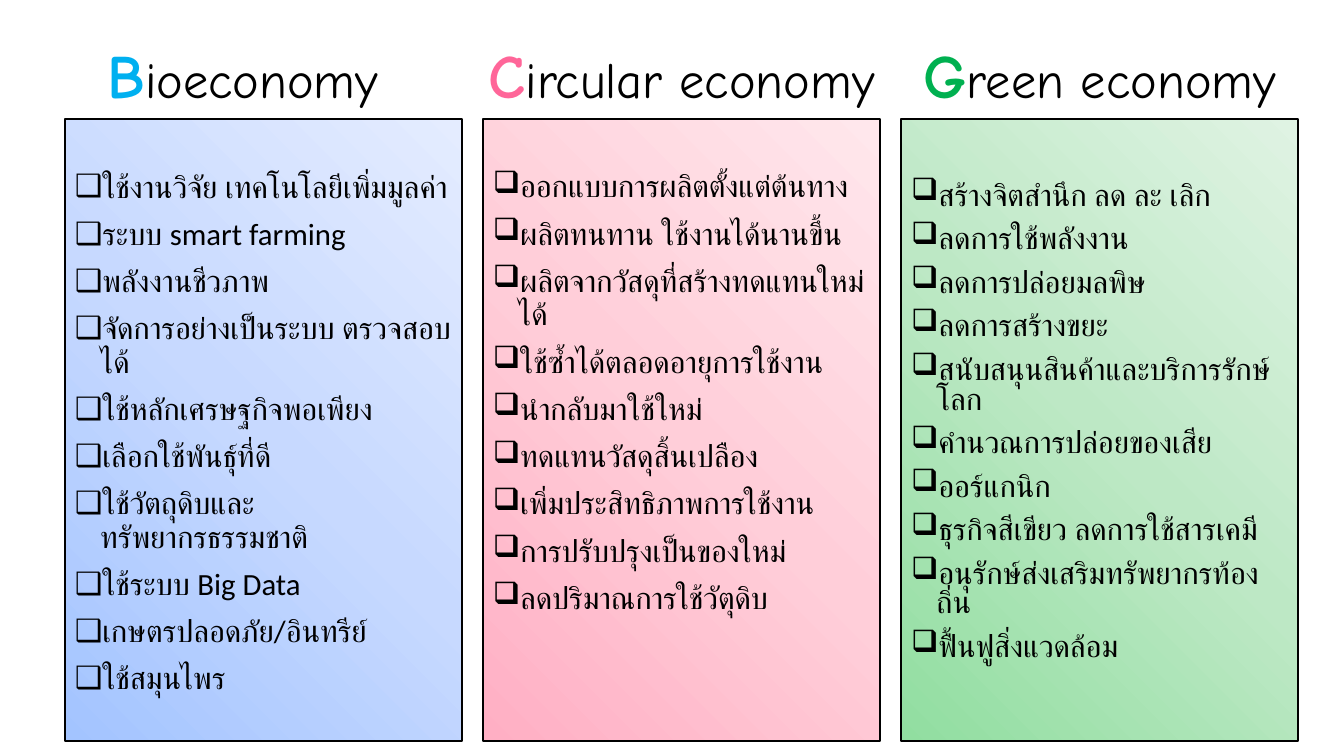
import copy
import pptx
import pptx.util
import pptx.dml.color
import pptx.enum.text
import pptx.enum.shapes
import pptx.oxml.ns
import lxml.etree

Cm, Pt = pptx.util.Cm, pptx.util.Pt
Enum = pptx.enum.text

HUES = {
    "ink": "000000",
    "bio": "00B0F0", "circle": "FF6699", "green": "00B050",
    "bio fade": ("A3C4FF", "C7D9FF", "E4ECFF"),
    "circle fade": ("FFAFC4", "FFCED9", "FFE7EC"),
    "green fade": ("91DEA0", "BDE8C5", "DFF3E3"),
}
COLUMNS = [
    dict(hue="bio", head="Bioeconomy", left=1.12, wide=10, lead=0.9, inset=1.32, items=[
        "ใช้งานวิจัย เทคโนโลยีเพิ่มมูลค่า",
        "ระบบ smart farming",
        "พลังงานชีวภาพ",
        "จัดการอย่างเป็นระบบ ตรวจสอบได้",
        "ใช้หลักเศรษฐกิจพอเพียง",
        "เลือกใช้พันธุ์ที่ดี",
        "ใช้วัตถุดิบและทรัพยากรธรรมชาติ",
        "ใช้ระบบ Big Data",
        "เกษตรปลอดภัย/อินทรีย์",
        "ใช้สมุนไพร",
    ]),
    dict(hue="circle", head="Circular economy", left=11.02, wide=12.32, lead=0.9, inset=1.32, items=[
        "ออกแบบการผลิตตั้งแต่ต้นทาง",
        "ผลิตทนทาน ใช้งานได้นานขึ้น",
        "ผลิตจากวัสดุที่สร้างทดแทนใหม่ได้",
        "ใช้ซ้ำได้ตลอดอายุการใช้งาน",
        "นำกลับมาใช้ใหม่",
        "ทดแทนวัสดุสิ้นเปลือง",
        "เพิ่มประสิทธิภาพการใช้งาน",
        "การปรับปรุงเป็นของใหม่",
        "ลดปริมาณการใช้วัตุดิบ",
    ]),
    dict(hue="green", head="Green economy", left=22.71, wide=10, lead=0.8, inset=1.6, items=[
        "สร้างจิตสำนึก ลด ละ เลิก",
        "ลดการใช้พลังงาน",
        "ลดการปล่อยมลพิษ",
        "ลดการสร้างขยะ",
        "สนับสนุนสินค้าและบริการรักษ์โลก",
        "คำนวณการปล่อยของเสีย",
        "ออร์แกนิก",
        "ธุรกิจสีเขียว ลดการใช้สารเคมี",
        "อนุรักษ์ส่งเสริมทรัพยากรท้องถิ่น",
        "ฟื้นฟูสิ่งแวดล้อม",
    ]),
]
LEFT, TOP, WIDE, HIGH, STEP = 1.63, 3, 10.01, 15.67, 10.54
HEAD_TOP, HEAD_HIGH = 0.81, 2.13


def color(name):
    return pptx.dml.color.RGBColor.from_string(name)


def write(para, text, size=22, font="Calibri", hue=HUES["ink"], bold=False):
    run = para.add_run()
    run.text = text
    run.font.size = Pt(size)
    run.font.name = font
    run.font.bold = bold
    run.font.color.rgb = color(hue)


def place(shape, left, top, wide, high):
    shape.left, shape.top, shape.width, shape.height = map(Cm, (left, top, wide, high))
    frame = shape.text_frame
    frame.word_wrap = True
    frame.auto_size = Enum.MSO_AUTO_SIZE.NONE
    frame.vertical_anchor = Enum.MSO_ANCHOR.TOP
    return frame


def bullet(para):
    props = para._p.get_or_add_pPr()
    props.set("marL", str(Cm(0.64)))
    props.set("indent", str(-Cm(0.64)))
    mark = lxml.etree.SubElement(props, pptx.oxml.ns.qn("a:buChar"))
    mark.set("char", "❑")


def fade(shape, hues):
    shape.fill.gradient()
    stops = shape.fill.gradient_stops
    last = shape._element.spPr.findall(".//" + pptx.oxml.ns.qn("a:gs"))[-1]
    last.addnext(copy.deepcopy(last))
    stops = shape.fill.gradient_stops
    for num, (stop, hue) in enumerate(zip(stops, hues)):
        stop.position = num / 2
        stop.color.rgb = color(hue)
    shape.fill.gradient_angle = 45


def panel(shape, col, left):
    frame = place(shape, left, TOP, WIDE, HIGH)
    frame.margin_top = Cm(col["inset"])
    fade(shape, HUES[col["hue"] + " fade"])
    shape.line.color.rgb = color(HUES["ink"])
    shape.line.width = Pt(1.5)
    for num, item in enumerate(col["items"]):
        para = frame.add_paragraph() if num else frame.paragraphs[0]
        bullet(para)
        para.alignment = Enum.PP_ALIGN.LEFT
        para.line_spacing = col["lead"]
        para.space_before = Pt(10 if num else 0)
        write(para, item)


def heading(shape, col):
    para = place(shape, col["left"], HEAD_TOP, col["wide"], HEAD_HIGH).paragraphs[0]
    para.alignment = Enum.PP_ALIGN.CENTER
    write(para, col["head"][0], size=44, font="Comic Neue", hue=HUES[col["hue"]], bold=True)
    write(para, col["head"][1:], size=36, font="Comic Neue")


def main():
    deck = pptx.Presentation()
    deck.slide_width, deck.slide_height = Cm(33.87), Cm(19.05)
    slide = deck.slides.add_slide(deck.slide_layouts[1])
    shapes = slide.shapes
    for num, col in enumerate(COLUMNS):
        if num:
            box = shapes.add_shape(pptx.enum.shapes.MSO_SHAPE.RECTANGLE, 0, 0, 0, 0)
            box.shadow.inherit = False
            head = shapes.add_textbox(0, 0, 0, 0)
        else:
            box, head = slide.placeholders[1], shapes.title
        panel(box, col, LEFT + num * STEP)
        heading(head, col)
    deck.save("out.pptx")


if __name__ == "__main__":
    main()
